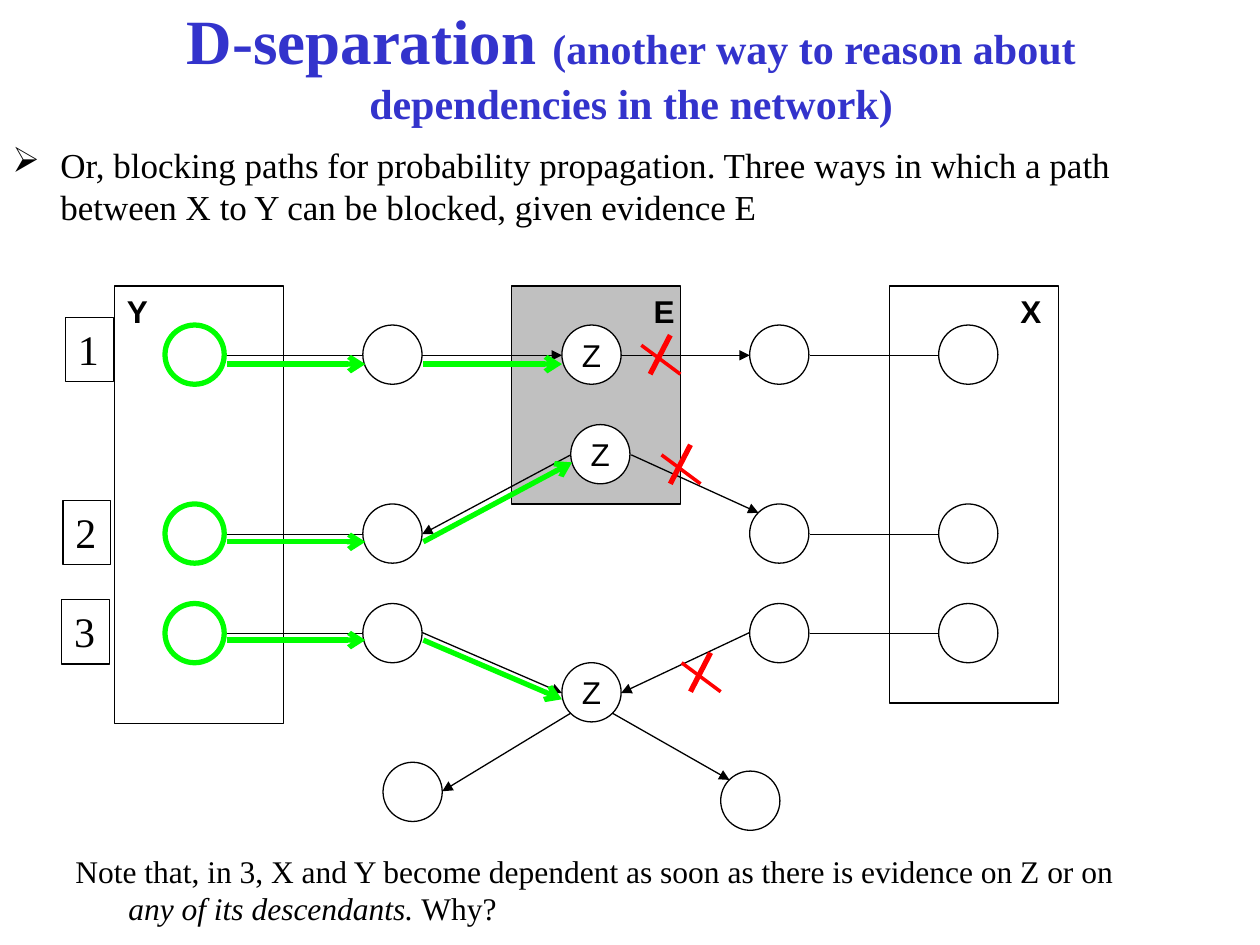
from dataclasses import dataclass
from lxml.etree import SubElement
from pptx import Presentation
from pptx.dml.color import RGBColor as Rgb
from pptx.enum.shapes import MSO_CONNECTOR as Conn, MSO_SHAPE as Kind
from pptx.enum.text import MSO_ANCHOR as Anchor, MSO_AUTO_SIZE as Fit, PP_ALIGN as Align
from pptx.oxml.ns import qn
from pptx.util import Emu, Pt

SCALE = 9144


def px(n):
    return Emu(n * SCALE)


@dataclass(frozen=True)
class Theme:
    black: Rgb = Rgb(0, 0, 0)
    white: Rgb = Rgb(255, 255, 255)
    blue: Rgb = Rgb(0x33, 0x33, 0xCC)
    gray: Rgb = Rgb(0xC0, 0xC0, 0xC0)
    green: Rgb = Rgb(0, 255, 0)
    red: Rgb = Rgb(255, 0, 0)
    serif: str = "Times New Roman"
    sans: str = "Arial"
    title: int = 36
    sub: int = 24
    body: int = 20
    small: int = 18
    digit: int = 24
    thin: float = 0.75
    mid: int = 2
    thick: int = 3


class Board:
    def __init__(self, slide, theme):
        self.slide = slide
        self.theme = theme

    def style(self, para, size, face, color=None, bold=False):
        font = para.font
        font.size = Pt(size)
        font.name = face
        font.bold = bold
        font.color.rgb = color or self.theme.black

    def title(self, box, parts):
        shape = self.slide.shapes.title
        shape.left, shape.top, shape.width, shape.height = map(px, box)
        frame = shape.text_frame
        frame.auto_size = Fit.NONE
        frame.vertical_anchor = Anchor.MIDDLE
        para = frame.paragraphs[0]
        para.alignment = Align.CENTER
        self.style(para, self.theme.title, self.theme.serif, self.theme.blue, True)
        for text, size in parts:
            run = para.add_run()
            run.text = text
            run.font.size = Pt(size)

    def text(self, box, parts, size, left, hang, mark=None):
        frame = self.slide.shapes.add_textbox(*map(px, box)).text_frame
        frame.word_wrap = True
        para = frame.paragraphs[0]
        props = para._p.get_or_add_pPr()
        props.set("marL", str(px(left)))
        props.set("indent", str(px(-hang)))
        if mark:
            SubElement(props, qn("a:buChar")).set("char", mark)
        self.style(para, size, self.theme.serif)
        for words, slant in parts:
            run = para.add_run()
            run.text = words
            if slant:
                run.font.italic = True

    def label(self, x, y, text):
        frame = self.slide.shapes.add_textbox(*map(px, (x, y, 37, 40))).text_frame
        frame.word_wrap = False
        frame.auto_size = Fit.SHAPE_TO_FIT_TEXT
        frame.text = text
        self.style(frame.paragraphs[0], self.theme.small, self.theme.sans, bold=True)

    def shape(self, kind, box, fill=None, color=None, width=None):
        shape = self.slide.shapes.add_shape(kind, *map(px, box))
        shape.shadow.inherit = False
        if fill is None:
            shape.fill.background()
        else:
            shape.fill.solid()
            shape.fill.fore_color.rgb = fill
        shape.line.color.rgb = color or self.theme.black
        shape.line.width = Pt(width or self.theme.thin)
        return shape

    def rect(self, box, fill=None):
        return self.shape(Kind.RECTANGLE, box, fill)

    def node(self, x, y, text="", fill=None, color=None, width=None):
        shape = self.shape(Kind.OVAL, (x, y, 47, 47), fill, color, width)
        if text:
            frame = shape.text_frame
            frame.word_wrap = False
            frame.vertical_anchor = Anchor.MIDDLE
            frame.text = text
            para = frame.paragraphs[0]
            para.alignment = Align.CENTER
            self.style(para, self.theme.small, self.theme.sans)

    def digit(self, x, y, text):
        frame = self.rect((x, y, 38, 51)).text_frame
        frame.word_wrap = False
        frame.auto_size = Fit.SHAPE_TO_FIT_TEXT
        frame.vertical_anchor = Anchor.TOP
        frame.text = text
        para = frame.paragraphs[0]
        para.alignment = Align.LEFT
        self.style(para, self.theme.digit, self.theme.serif)

    def line(self, ends, color=None, width=None, head=None):
        line = self.slide.shapes.add_connector(Conn.STRAIGHT, *map(px, ends))
        line.line.color.rgb = color or self.theme.black
        line.line.width = Pt(width or self.theme.thin)
        if head:
            SubElement(line.line._get_or_add_ln(), qn("a:tailEnd")).set("type", head)
        SubElement(line._element.spPr, qn("a:effectLst"))

    def cross(self, x, y):
        red = self.theme.red
        self.line((x, y + 8, x + 31, y + 31), red, self.theme.mid)
        self.line((x + 23, y, x + 7, y + 31), red, self.theme.thick)


def main():
    deck = Presentation()
    deck.slide_width, deck.slide_height = px(1000), px(750)
    theme = Theme()
    board = Board(deck.slides.add_slide(deck.slide_layouts[5]), theme)

    board.title((51, -11, 900, 125), [
        ("D-separation ", theme.title),
        ("(another way to reason about dependencies in the network)", theme.sub)])
    board.text((0, 109, 945, 79), [
        ("Or, blocking paths for probability propagation. Three ways in which a path "
         "between X to Y can be blocked, given evidence E", False)],
        theme.body, 38, 38, "➢")

    board.rect((91, 227, 134, 347))
    board.rect((406, 227, 134, 173), theme.gray)
    board.rect((706, 227, 134, 331))

    rows = (258, 400, 479)
    for y in rows:
        for x in (131, 288, 595, 745):
            board.node(x, y)
        for x, end in ((178, 288), (643, 745)):
            board.line((x, y + 24, end, y + 24))
    for x, y, fill in ((446, 258, theme.white), (453, 337, theme.white), (446, 526, None)):
        board.node(x, y, "Z", fill)
    for x, y in ((304, 605), (572, 612)):
        board.node(x, y)

    for ends in ((335, 282, 446, 282), (493, 282, 595, 282),
                 (335, 502, 446, 550), (501, 361, 602, 407),
                 (453, 361, 335, 424), (595, 502, 493, 550),
                 (453, 566, 351, 628), (486, 566, 579, 619)):
        board.line(ends, head="triangle")

    for x, text in ((800, "X"), (91, "Y"), (509, "E")):
        board.label(x, 227, text)
    board.text((0, 671, 902, 79), [
        ("Note that, in 3, X and Y become dependent as soon as there is evidence "
         "on Z or on ", False),
        ("any of its descendants. ", True), ("Why?", False)],
        theme.small, 92, 42)

    paths = zip(rows, (289, 430, 508), ((446, 289), (454, 367), (446, 555)))
    for y, start, end in paths:
        board.node(131, y, color=theme.green, width=theme.thick)
        for ends in ((180, start, 290, start), (336, start, *end)):
            board.line(ends, theme.green, theme.thick, "arrow")
    for x, y in ((509, 266), (525, 353), (541, 518)):
        board.cross(x, y)
    for x, y, text in ((52, 252, "1"), (50, 397, "2"), (49, 476, "3")):
        board.digit(x, y, text)

    deck.save("out.pptx")


if __name__ == "__main__":
    main()
